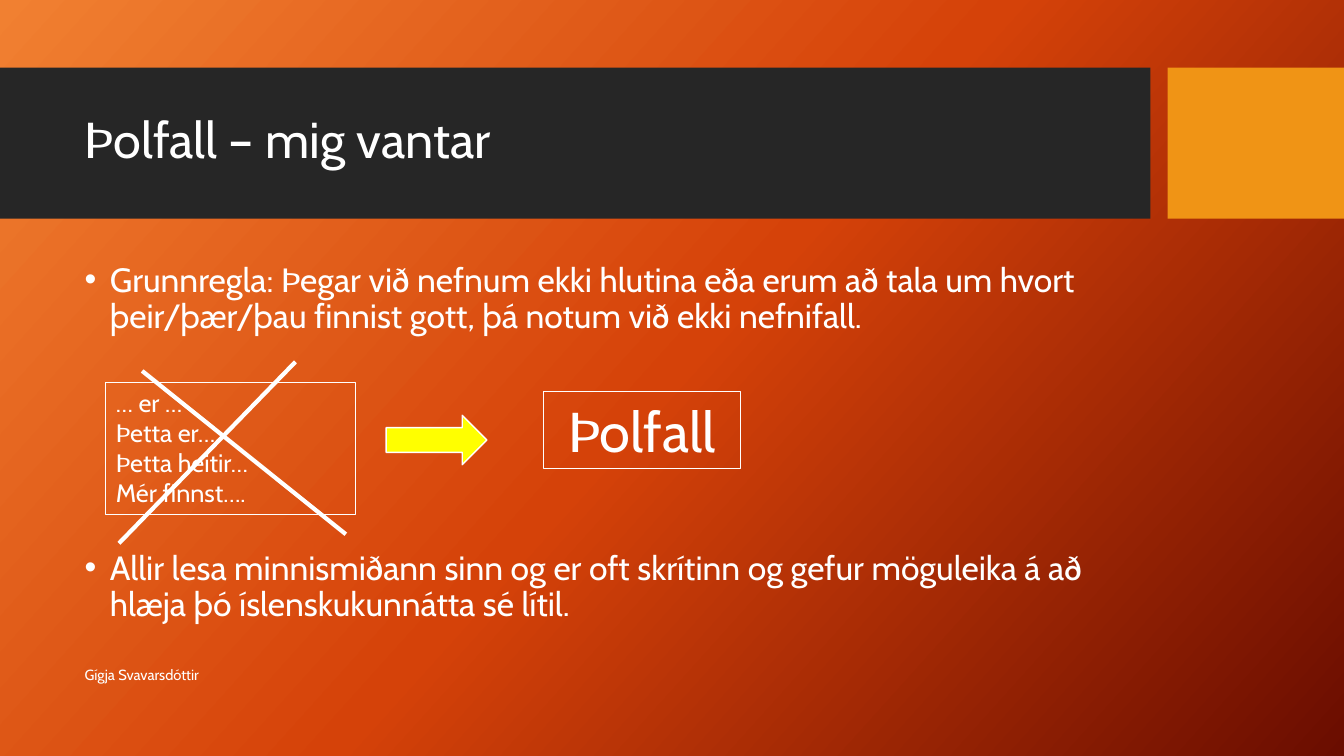
import copy
from dataclasses import dataclass

import pptx
import pptx.dml.color
import pptx.enum.shapes
import pptx.enum.text
import pptx.oxml
import pptx.oxml.ns
import pptx.util
from pptx.util import Inches

RGBColor = pptx.dml.color.RGBColor
MSO_SHAPE = pptx.enum.shapes.MSO_SHAPE
MSO_ANCHOR = pptx.enum.text.MSO_ANCHOR
PP_ALIGN = pptx.enum.text.PP_ALIGN
qn = pptx.oxml.ns.qn

FONT = "Cabin"
WHITE = RGBColor(0xFF, 0xFF, 0xFF)
CHARCOAL = RGBColor(0x26, 0x26, 0x26)
AMBER = RGBColor(0xF0, 0x94, 0x15)
YELLOW = RGBColor(0xFF, 0xFF, 0x00)
BACKGROUND = [
    (0, RGBColor(0xF1, 0x80, 0x31)),
    (0.5, RGBColor(0xD5, 0x42, 0x09)),
    (1, RGBColor(0x6A, 0x0D, 0x00)),
]


@dataclass
class Box:
    left: float
    top: float
    width: float
    height: float
    kind: MSO_SHAPE = MSO_SHAPE.RECTANGLE
    fill: RGBColor | None = None
    line: float = 0
    lines: tuple[str, ...] = ()
    size: float = 18
    align: PP_ALIGN = PP_ALIGN.LEFT


@dataclass
class Stroke:
    x1: float
    y1: float
    x2: float
    y2: float


BARS = [
    Box(0, 0.67, 11.41, 1.5, fill=CHARCOAL),
    Box(11.58, 0.67, 1.75, 1.5, fill=AMBER),
]
NOMINATIVE = Box(1.05, 3.79, 2.48, 1.31, line=0.75,
                 lines=("… er …", "Þetta er….", "Þetta heitir…", "Mér finnst…."))
CROSS = [Stroke(1.41, 3.68, 3.43, 5.3), Stroke(2.93, 3.59, 1.18, 5.39)]
ARROW = Box(3.83, 4.12, 1, 0.49, MSO_SHAPE.RIGHT_ARROW, YELLOW, 1)
ACCUSATIVE = Box(5.39, 3.88, 1.95, 0.77, line=0.75, lines=("Þolfall",),
                 size=40, align=PP_ALIGN.CENTER)
BULLETS = [
    ("Grunnregla: Þegar við nefnum ekki hlutina eða erum að tala um hvort "
     "þeir/þær/þau finnist gott, þá notum við ekki nefnifall.", 0),
    ("Allir lesa minnismiðann sinn og er oft skrítinn og gefur möguleika á að "
     "hlæja þó íslenskukunnátta sé lítil.", 154),
]


def place(sp, left: float, top: float, width: float, height: float) -> None:
    sp.left, sp.top = Inches(left), Inches(top)
    sp.width, sp.height = Inches(width), Inches(height)


def add_run(p, text: str, size: float) -> None:
    r = p.add_run()
    r.text = text
    r.font.name = FONT
    r.font.size = pptx.util.Pt(size)
    r.font.color.rgb = WHITE


def paragraph(tf, i: int):
    return tf.add_paragraph() if i else tf.paragraphs[0]


def add_box(s, box: Box):
    sp = s.shapes.add_shape(box.kind, Inches(box.left), Inches(box.top),
                            Inches(box.width), Inches(box.height))
    sp.shadow.inherit = False
    if box.fill is None:
        sp.fill.background()
    else:
        sp.fill.solid()
        sp.fill.fore_color.rgb = box.fill
    if box.line:
        sp.line.color.rgb = WHITE
        sp.line.width = pptx.util.Pt(box.line)
    else:
        sp.line.fill.background()
    tf = sp.text_frame
    tf.word_wrap = True
    tf.vertical_anchor = MSO_ANCHOR.TOP
    for i, text in enumerate(box.lines):
        p = paragraph(tf, i)
        p.alignment = box.align
        add_run(p, text, box.size)
    return sp


def add_stroke(s, stroke: Stroke) -> None:
    line = s.shapes.add_connector(
        pptx.enum.shapes.MSO_CONNECTOR.STRAIGHT,
        Inches(stroke.x1), Inches(stroke.y1), Inches(stroke.x2), Inches(stroke.y2))
    line.line.color.rgb = WHITE
    line.line.width = pptx.util.Pt(3)
    pptx.oxml.ns  # namespace map used by qn
    line._element.spPr.append(pptx.oxml.parse_xml(
        '<a:effectLst xmlns:a="http://schemas.openxmlformats.org/drawingml/2006/main"/>'))


def add_bullet(p) -> None:
    pPr = p._p.get_or_add_pPr()
    pPr.set("marL", str(Inches(0.25)))
    pPr.set("indent", str(Inches(-0.25)))
    for tag, key, value in (("a:buFont", "typeface", "Arial"), ("a:buChar", "char", "•")):
        pPr.append(pPr.makeelement(qn(tag), {key: value}))


def paint_background(s) -> None:
    fill = s.background.fill
    fill.gradient()
    fill.gradient_angle = 360 - 42
    stops = s.element.find(".//" + qn("a:gsLst"))
    stops.append(copy.deepcopy(stops[-1]))
    for stop, (position, color) in zip(fill.gradient_stops, BACKGROUND):
        stop.position = position
        stop.color.rgb = color


def main() -> None:
    prs = pptx.Presentation()
    prs.slide_width, prs.slide_height = Inches(13.33), Inches(7.5)
    s = prs.slides.add_slide(prs.slide_layouts[1])
    paint_background(s)

    # Title bars, behind the placeholders
    for i, bar in enumerate(BARS):
        s.shapes._spTree.insert(2 + i, add_box(s, bar)._element)

    # Title
    title = s.shapes.title
    place(title, 0.74, 0.82, 10.51, 1.18)
    tf = title.text_frame
    tf.vertical_anchor = MSO_ANCHOR.MIDDLE
    tf.auto_size = pptx.enum.text.MSO_AUTO_SIZE.NONE
    p = tf.paragraphs[0]
    p.alignment = PP_ALIGN.LEFT
    p.line_spacing = 0.9
    add_run(p, "Þolfall – mig vantar", 36)

    # Bullets above and below the diagram
    body = s.placeholders[1]
    place(body, 0.74, 2.56, 10.51, 3.94)
    tf = body.text_frame
    tf.auto_size = pptx.enum.text.MSO_AUTO_SIZE.NONE
    for i, (text, before) in enumerate(BULLETS):
        p = paragraph(tf, i)
        add_bullet(p)
        p.line_spacing = 0.9
        p.space_before = pptx.util.Pt(before)
        add_run(p, text, 24)

    # Footer
    footer = s.shapes.add_textbox(Inches(0.74), Inches(6.49), Inches(7.51), Inches(0.4))
    tf = footer.text_frame
    tf.word_wrap = True
    tf.vertical_anchor = MSO_ANCHOR.MIDDLE
    add_run(tf.paragraphs[0], "Gígja Svavarsdóttir", 10.5)

    # Crossed-out phrases, arrow and result
    add_box(s, NOMINATIVE)
    for stroke in CROSS:
        add_stroke(s, stroke)
    add_box(s, ARROW)
    add_box(s, ACCUSATIVE)

    prs.save("out.pptx")


if __name__ == "__main__":
    main()
